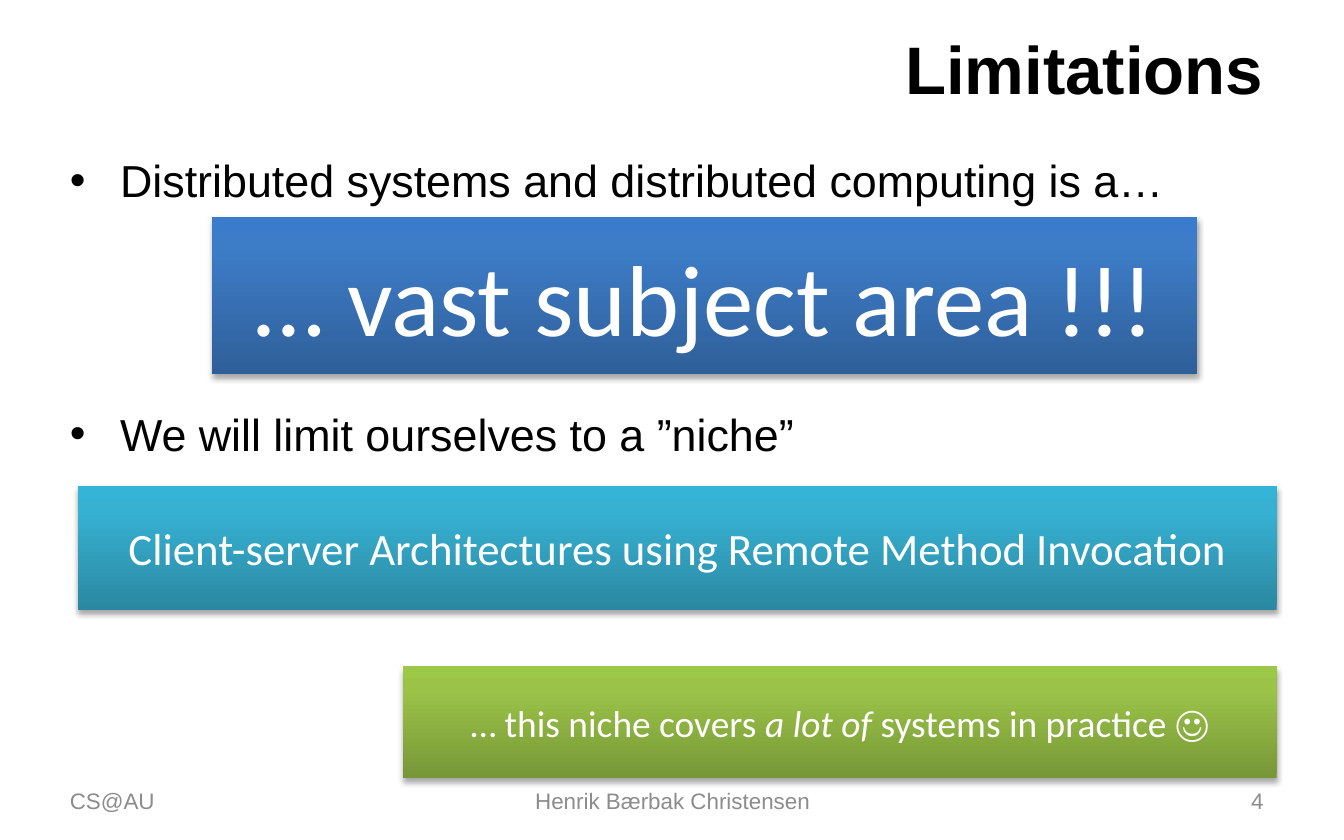
from lxml import etree
from pptx import Presentation, util as u
from pptx.dml.color import RGBColor
from pptx.enum import shapes, text
from pptx.oxml import ns

LEFT, CENTER, RIGHT = text.PP_ALIGN.LEFT, text.PP_ALIGN.CENTER, text.PP_ALIGN.RIGHT
TOP, MIDDLE = text.MSO_ANCHOR.TOP, text.MSO_ANCHOR.MIDDLE

TITLE = ("Limitations", (1.27, 0.46, 22.86, 1.65))
BULLETS = [
    "Distributed systems and distributed computing is a…",
    "We will limit ourselves to a ”niche”",
]
BULLETS_PLACE = (1.07, 2.64, 23.06, 11.99)
BULLET_GAP = 107
FOOTERS = [
    ("CS@AU", 1.07, 5.92, LEFT),
    ("Henrik Bærbak Christensen", 8.69, 8.05, CENTER),
    ("4", 18.21, 5.92, RIGHT),
]
FOOTER_TOP, FOOTER_HEIGHT = 14.71, 0.84
BANNERS = [
    ([("… vast subject area !!!", False)], 54,
     (4.01, 4.11, 18.62, 2.97), ("2F5F99", "3D7CC7", "3A7CCB")),
    ([("Client-server Architectures using Remote Method Invocation", False)], 24,
     (1.47, 9.19, 22.66, 2.34), ("2A88A2", "37B1D2", "34B4D6")),
    ([("… this niche covers ", False), ("a lot of ", True),
      ("systems in practice ☺", False)], 20,
     (7.62, 12.6, 16.51, 2.11), ("779737", "9BC348", "9DC746")),
]
STOPS = (0, 80, 100)

TITLE_FONT = {"name": "Arial", "size": u.Pt(36), "bold": True}
BULLET_FONT = {"name": "Arial", "size": u.Pt(24)}
FOOTER_FONT = {"name": "Arial", "size": u.Pt(12)}


def color(value):
    return RGBColor.from_string(value)


def style(font, values, hue):
    for key, value in values.items():
        setattr(font, key, value)
    font.color.rgb = color(hue)


def add(parent, tag, **attributes):
    child = etree.SubElement(parent, ns.qn(tag))
    for key, value in attributes.items():
        child.set(key, str(value))
    return child


def add_text(slide, place, lines, font, hue, align=LEFT, anchor=MIDDLE):
    frame = slide.shapes.add_textbox(*map(u.Cm, place)).text_frame
    frame.word_wrap = True
    frame.vertical_anchor = anchor
    frame.text = "\n".join(lines)
    for paragraph in frame.paragraphs:
        paragraph.alignment = align
        for run in paragraph.runs:
            style(run.font, font, hue)
    return frame


def add_bullets(slide):
    frame = add_text(slide, BULLETS_PLACE, BULLETS, BULLET_FONT, "000000", anchor=TOP)
    frame.margin_top = u.Cm(0.25)
    for index, paragraph in enumerate(frame.paragraphs):
        if index:
            paragraph.space_before = u.Pt(BULLET_GAP)
        properties = paragraph._p.get_or_add_pPr()
        properties.set("marL", str(u.Cm(0.95)))
        properties.set("indent", str(u.Cm(-0.95)))
        add(properties, "a:buFont", typeface="Arial")
        add(properties, "a:buChar", char="•")


def add_banner(slide, phrases, size, place, hues):
    banner = slide.shapes.add_shape(shapes.MSO_SHAPE.RECTANGLE, *map(u.Cm, place))
    banner.line.fill.background()
    banner.fill.gradient()
    banner.fill.gradient_angle = 90
    properties = banner._element.spPr
    stops = properties.find(".//" + ns.qn("a:gsLst"))
    for stop in list(stops):
        stops.remove(stop)
    for position, hue in zip(STOPS, hues):
        add(add(stops, "a:gs", pos=position * 1000), "a:srgbClr", val=hue)

    banner.shadow.inherit = False
    shadow = add(properties.find(ns.qn("a:effectLst")), "a:outerShdw",
                 blurRad=u.Pt(3.1), dist=u.Pt(1.8), dir=5400000, rotWithShape=0)
    add(add(shadow, "a:srgbClr", val="000000"), "a:alpha", val=35000)

    frame = banner.text_frame
    frame.word_wrap = True
    frame.vertical_anchor = MIDDLE
    paragraph = frame.paragraphs[0]
    paragraph.alignment = CENTER
    for phrase, italic in phrases:
        run = paragraph.add_run()
        run.text = phrase
        style(run.font, {"name": "Calibri", "size": u.Pt(size), "italic": italic}, "FFFFFF")


def main():
    deck = Presentation()
    deck.slide_width, deck.slide_height = u.Cm(25.4), u.Cm(15.88)
    slide = deck.slides.add_slide(deck.slide_layouts[6])
    title, title_place = TITLE
    add_text(slide, title_place, [title], TITLE_FONT, "000000", RIGHT)
    add_bullets(slide)
    for footer, left, width, align in FOOTERS:
        add_text(slide, (left, FOOTER_TOP, width, FOOTER_HEIGHT), [footer],
                 FOOTER_FONT, "8C8C8C", align)
    for banner in BANNERS:
        add_banner(slide, *banner)
    deck.save("out.pptx")


if __name__ == "__main__":
    main()
